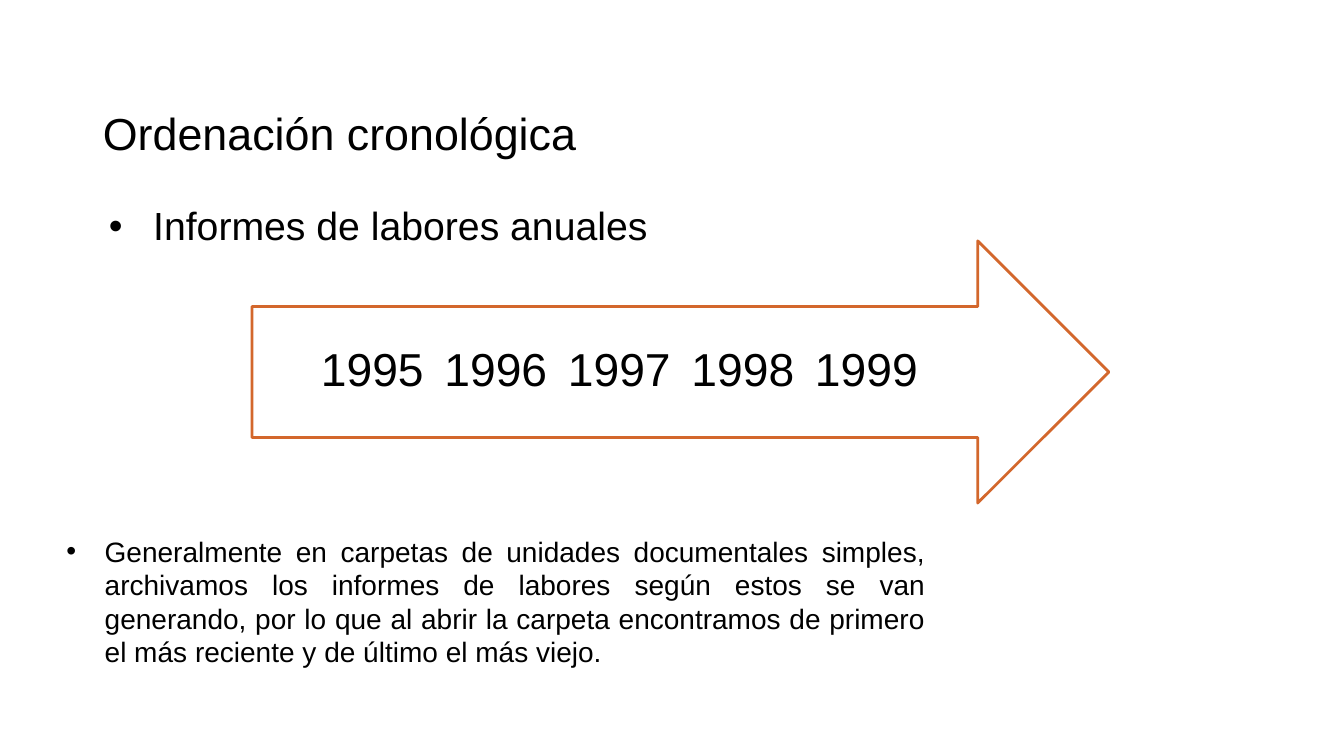
from dataclasses import dataclass, field
from typing import Any

from lxml import etree
from pptx import Presentation
from pptx.dml.color import RGBColor
from pptx.enum.shapes import MSO_SHAPE
from pptx.enum.text import MSO_ANCHOR, MSO_AUTO_SIZE, PP_ALIGN
from pptx.oxml.ns import qn
from pptx.util import Inches, Pt

BLACK = RGBColor(0x00, 0x00, 0x00)
WHITE = RGBColor(0xFF, 0xFF, 0xFF)
ORANGE = RGBColor(0xD3, 0x67, 0x2C)
FONT = "Arial"

LEFT, CENTER, JUSTIFY = PP_ALIGN.LEFT, PP_ALIGN.CENTER, PP_ALIGN.JUSTIFY
TOP, MIDDLE = MSO_ANCHOR.TOP, MSO_ANCHOR.MIDDLE
NO_FIT, GROW = MSO_AUTO_SIZE.NONE, MSO_AUTO_SIZE.SHAPE_TO_FIT_TEXT
RIGHT_ARROW = MSO_SHAPE.RIGHT_ARROW

SLIDE_WIDTH, SLIDE_HEIGHT = Inches(13.33), Inches(7.5)
COLUMN, ROW = SLIDE_WIDTH / 100, SLIDE_HEIGHT / 100

YEARS = range(1995, 2000)
FIRST_YEAR_LEFT, YEAR_STEP = 23.88, 9.19
NOTE = (
    "Generalmente en carpetas de unidades documentales simples, archivamos los "
    "informes de labores según estos se van generando, por lo que al abrir la "
    "carpeta encontramos de primero el más reciente y de último el más viejo."
)


@dataclass(frozen=True)
class Area:
    left: float
    top: float
    width: float
    height: float

    def lengths(self) -> tuple[int, int, int, int]:
        return (
            round(self.left * COLUMN),
            round(self.top * ROW),
            round(self.width * COLUMN),
            round(self.height * ROW),
        )


@dataclass(frozen=True)
class TextItem:
    text: str
    area: Area
    size: float
    frame: dict[str, Any]
    paragraph: dict[str, Any]
    bullet_indent: tuple[float, float] | None = None
    margins: dict[str, Any] = field(default_factory=dict)


def apply_format(target: Any, values: dict[str, Any]) -> None:
    for name, value in values.items():
        setattr(target, name, value)


def add_bullet(para: Any, indent: tuple[float, float]) -> None:
    margin, first_line = indent
    properties = para._p.get_or_add_pPr()
    properties.set("marL", str(Inches(margin)))
    properties.set("indent", str(Inches(first_line)))
    bullet_color = etree.SubElement(properties, qn("a:buClr"))
    etree.SubElement(bullet_color, qn("a:srgbClr"), val=str(BLACK))
    etree.SubElement(properties, qn("a:buFont"), typeface=FONT)
    etree.SubElement(properties, qn("a:buChar"), char="•")


def write_text(box: Any, item: TextItem) -> None:
    left, top, width, height = item.area.lengths()
    apply_format(box, {"left": left, "top": top, "width": width, "height": height})
    frame = box.text_frame
    apply_format(frame, item.frame | item.margins)
    para = frame.paragraphs[0]
    apply_format(para, item.paragraph | {"space_before": Pt(0)})
    if item.bullet_indent:
        add_bullet(para, item.bullet_indent)
    span = para.add_run()
    span.text = item.text
    apply_format(span.font, {"name": FONT, "size": Pt(item.size)})
    span.font.color.rgb = BLACK


def draw_arrow(shapes: Any, area: Area) -> None:
    arrow = shapes.add_shape(RIGHT_ARROW, *area.lengths())
    arrow.shadow.inherit = False
    arrow.fill.solid()
    arrow.fill.fore_color.rgb = WHITE
    arrow.line.color.rgb = ORANGE
    arrow.line.width = Pt(2)


def draw_timeline(page: Any) -> None:
    timeline = page.shapes.add_group_shape()
    draw_arrow(timeline.shapes, Area(18.75, 31.87, 63.75, 34.67))
    for index, year in enumerate(YEARS):
        area = Area(FIRST_YEAR_LEFT + index * YEAR_STEP, 40.53, 7.65, 17.33)
        item = TextItem(
            str(year),
            area,
            33,
            {"vertical_anchor": MIDDLE, "word_wrap": False, "auto_size": NO_FIT},
            {"alignment": CENTER, "line_spacing": 0.9},
            margins={
                "margin_left": 0,
                "margin_right": 0,
                "margin_top": Inches(0.37),
                "margin_bottom": Inches(0.37),
            },
        )
        write_text(timeline.shapes.add_textbox(*area.lengths()), item)


def main() -> None:
    deck = Presentation()
    apply_format(deck, {"slide_width": SLIDE_WIDTH, "slide_height": SLIDE_HEIGHT})
    page = deck.slides.add_slide(deck.slide_layouts[1])
    title = TextItem(
        "Ordenación cronológica",
        Area(6.9, 11.33, 86.25, 13.33),
        32,
        {"vertical_anchor": MIDDLE, "word_wrap": True, "auto_size": NO_FIT},
        {"alignment": LEFT, "line_spacing": 0.9},
    )
    body = TextItem(
        "Informes de labores anuales",
        Area(6.9, 26.67, 86.25, 63.47),
        28,
        {"vertical_anchor": TOP, "word_wrap": True, "auto_size": NO_FIT},
        {"alignment": LEFT, "line_spacing": 0.9},
        (0.5, -0.44),
    )
    note = TextItem(
        NOTE,
        Area(4.2, 70, 65.4, 19.33),
        20,
        {"vertical_anchor": TOP, "word_wrap": True, "auto_size": GROW},
        {"alignment": JUSTIFY},
        (0.38, -0.38),
    )
    write_text(page.shapes.title, title)
    write_text(page.placeholders[1], body)
    draw_timeline(page)
    write_text(page.shapes.add_textbox(*note.area.lengths()), note)
    deck.save("out.pptx")


if __name__ == "__main__":
    main()
